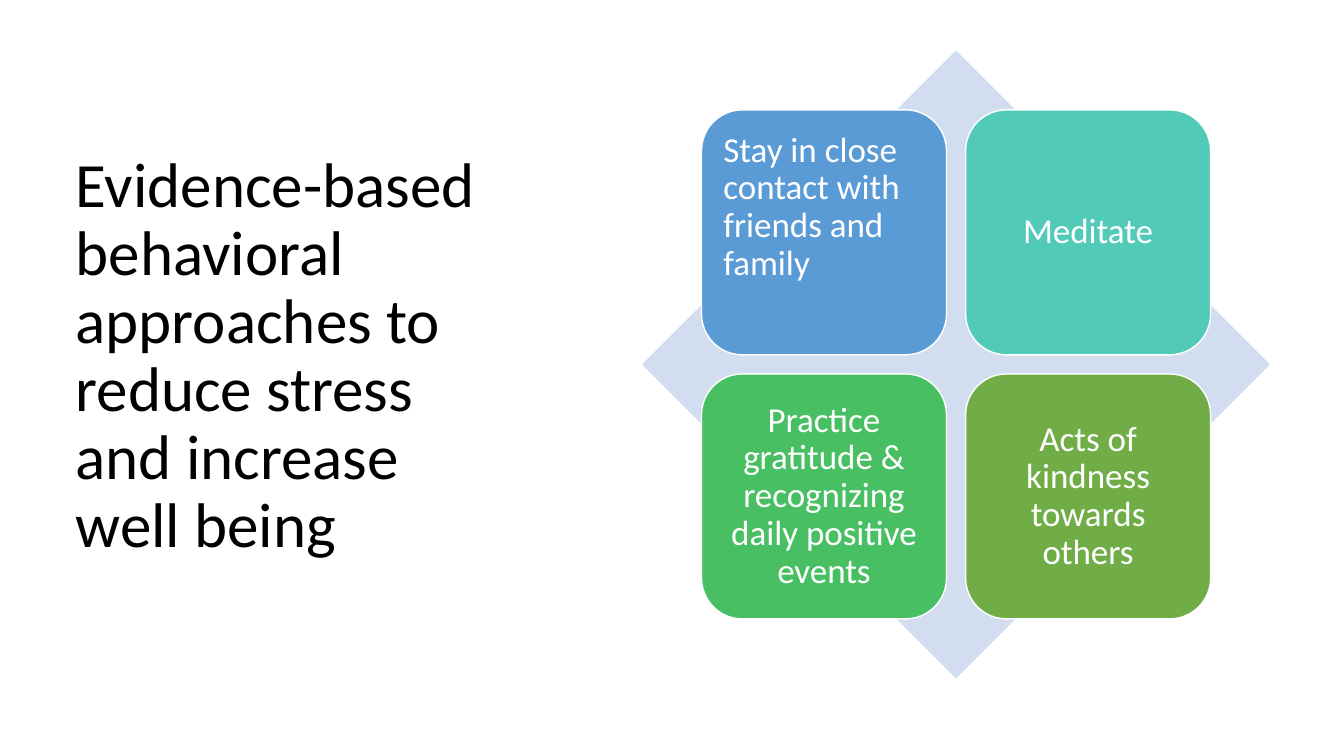
from dataclasses import dataclass

from pptx import Presentation
from pptx.dml.color import RGBColor
from pptx.enum.shapes import MSO_SHAPE
from pptx.enum.text import MSO_ANCHOR, MSO_AUTO_SIZE, PP_ALIGN
from pptx.shapes.autoshape import Shape
from pptx.slide import Slide
from pptx.text.text import TextFrame
from pptx.util import Pt

FONT = "Calibri"
LEFT, TOP = 501.12, 78.48
SIDE, STEP = 175, 188.64


@dataclass
class Tile:
    text: str
    fill: str
    align: PP_ALIGN = PP_ALIGN.CENTER
    anchor: MSO_ANCHOR = MSO_ANCHOR.MIDDLE


TILES = [
    Tile("Stay in close contact with friends and family", "5B9BD5",
         PP_ALIGN.LEFT, MSO_ANCHOR.TOP),
    Tile("Meditate", "52CAB8"),
    Tile("Practice gratitude & recognizing daily positive events", "49BF64"),
    Tile("Acts of kindness towards others", "70AD47"),
]


def color(code: str) -> RGBColor:
    return RGBColor.from_string(code)


def write(frame: TextFrame, text: str, size: float, ink: str,
          align: PP_ALIGN, anchor: MSO_ANCHOR) -> None:
    frame.word_wrap = True
    frame.auto_size = MSO_AUTO_SIZE.NONE
    frame.vertical_anchor = anchor
    para = frame.paragraphs[0]
    para.alignment = align
    para.line_spacing = 0.9
    run = para.add_run()
    run.text = text
    run.font.name = FONT
    run.font.size = Pt(size)
    run.font.color.rgb = color(ink)


def add_block(slide: Slide, kind: MSO_SHAPE, left: float, top: float,
              side: float, fill: str) -> Shape:
    block = slide.shapes.add_shape(kind, Pt(left), Pt(top), Pt(side), Pt(side))
    block.shadow.inherit = False
    block.fill.solid()
    block.fill.fore_color.rgb = color(fill)
    block.line.fill.background()
    return block


def add_tile(slide: Slide, tile: Tile, left: float, top: float) -> None:
    block = add_block(slide, MSO_SHAPE.ROUNDED_RECTANGLE, left, top, SIDE, tile.fill)
    block.line.color.rgb = color("FFFFFF")
    block.line.width = Pt(1)
    frame = block.text_frame
    frame.margin_left = frame.margin_right = Pt(7.2)
    frame.margin_top = frame.margin_bottom = Pt(7.2)
    write(frame, tile.text, 25, "FFFFFF", tile.align, tile.anchor)


def main() -> None:
    deck = Presentation()
    deck.slide_width, deck.slide_height = Pt(960), Pt(540)
    slide = deck.slides.add_slide(deck.slide_layouts[5])

    # Title on the left
    title = slide.shapes.title
    title.left, title.top = Pt(46.8), Pt(95.04)
    title.width, title.height = Pt(305.28), Pt(320.4)
    write(title.text_frame,
          "Evidence-based behavioral approaches to reduce stress "
          "and increase well being",
          45, "000000", PP_ALIGN.LEFT, MSO_ANCHOR.MIDDLE)

    # Diamond behind a two-by-two grid of tiles
    add_block(slide, MSO_SHAPE.DIAMOND, 458.64, 36, 448.56, "D2DEEF")
    for index, tile in enumerate(TILES):
        row, col = divmod(index, 2)
        add_tile(slide, tile, LEFT + col * STEP, TOP + row * STEP)

    deck.save("out.pptx")


if __name__ == "__main__":
    main()
